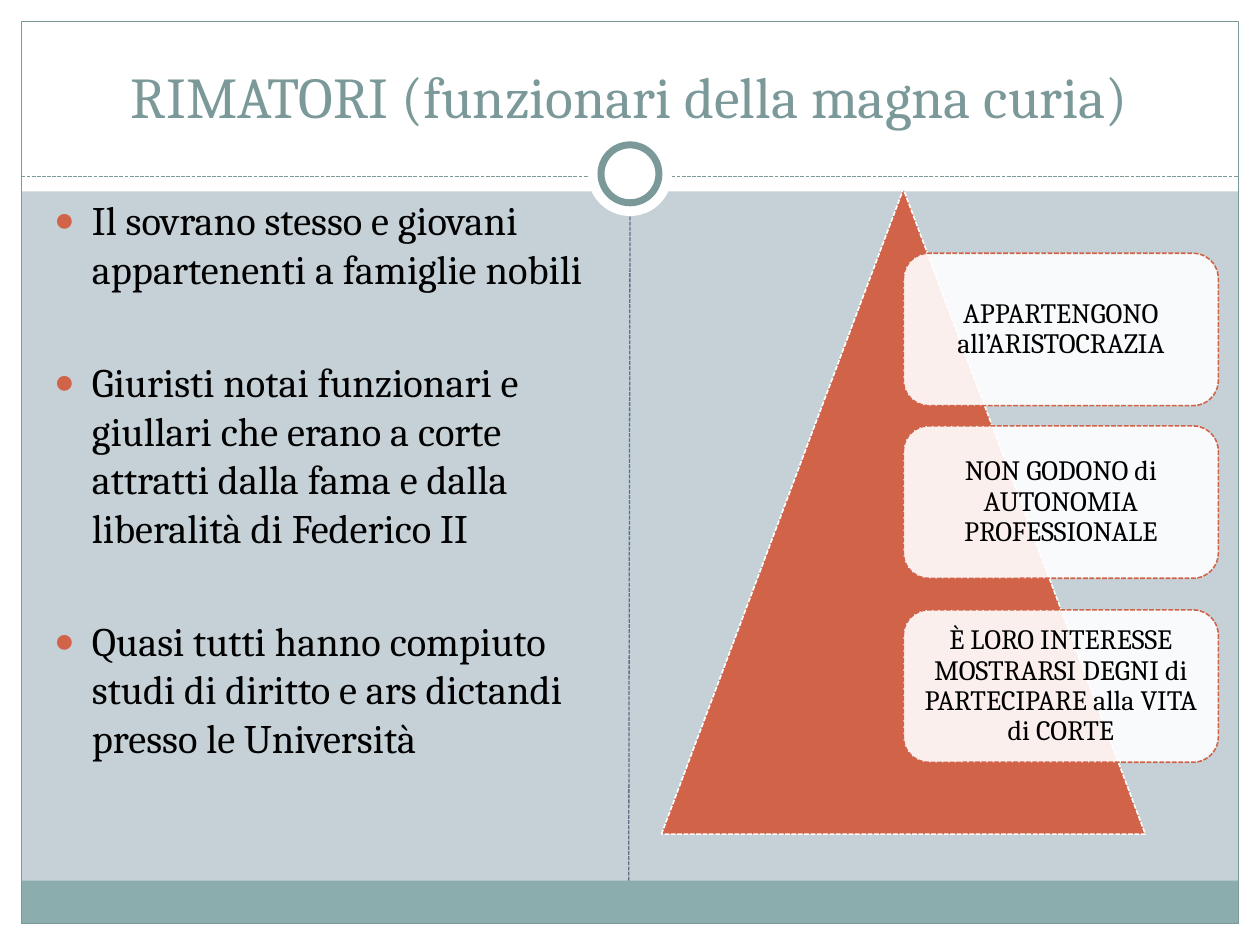
from lxml import etree
from pptx import Presentation
from pptx.dml.color import RGBColor
from pptx.enum.dml import MSO_LINE
from pptx.enum.shapes import MSO_CONNECTOR, MSO_SHAPE
from pptx.enum.text import MSO_ANCHOR, MSO_AUTO_SIZE, PP_ALIGN
from pptx.oxml.ns import qn
from pptx.util import Inches, Pt

COLORS = {
    "background": "C5D1D7",
    "white": "FFFFFF",
    "band": "8CADAE",
    "frame": "7C999A",
    "divider": "646B86",
    "accent": "D16349",
    "text": "000000",
}
FONT = "Cambria"
TITLE = "RIMATORI (funzionari della magna curia)"
BULLETS = [
    "Il sovrano stesso e giovani appartenenti a famiglie nobili",
    "Giuristi notai funzionari e giullari che erano a corte attratti dalla fama "
    "e dalla liberalità di Federico II",
    "Quasi tutti hanno compiuto studi di diritto e ars dictandi presso le Università",
]
# Top of each card and its text
CARDS = [
    (2.01, "APPARTENGONO all’ARISTOCRAZIA"),
    (3.38, "NON GODONO di AUTONOMIA PROFESSIONALE"),
    (4.84, "È LORO INTERESSE MOSTRARSI DEGNI di PARTECIPARE alla VITA di CORTE"),
]


def rgb(name):
    return RGBColor.from_string(COLORS[name])


def style_line(line, color, width, dashed=False):
    line.color.rgb = rgb(color)
    line.width = Pt(width)
    if dashed:
        line.dash_style = MSO_LINE.SQUARE_DOT


def add_box(slide, preset, box, fill=None, line=None, width=0.75, dashed=False):
    shape = slide.shapes.add_shape(preset, *map(Inches, box))
    shape.shadow.inherit = False
    if fill:
        shape.fill.solid()
        shape.fill.fore_color.rgb = rgb(fill)
    else:
        shape.fill.background()
    if line:
        style_line(shape.line, line, width, dashed)
    else:
        shape.line.fill.background()
    return shape


def add_dashed_line(slide, start, end, color):
    connector = slide.shapes.add_connector(
        MSO_CONNECTOR.STRAIGHT, *map(Inches, start + end))
    style_line(connector.line, color, 0.75, dashed=True)
    etree.SubElement(connector.element.spPr, qn("a:effectLst"))


def format_paragraph(paragraph, size, color, alignment):
    paragraph.alignment = alignment
    paragraph.font.name = FONT
    paragraph.font.size = Pt(size)
    paragraph.font.color.rgb = rgb(color)


def add_bullet(paragraph, color, indent):
    properties = paragraph._p.get_or_add_pPr()
    properties.set("marL", str(Inches(indent)))
    properties.set("indent", str(-Inches(indent)))
    bullet_color = etree.SubElement(properties, qn("a:buClr"))
    etree.SubElement(bullet_color, qn("a:srgbClr"), val=COLORS[color])
    etree.SubElement(properties, qn("a:buSzPct"), val="85000")
    etree.SubElement(properties, qn("a:buChar"), char="●")


def place_placeholder(placeholder, box, anchor):
    """Move a placeholder to its box and in front of the frame."""
    placeholder.left, placeholder.top, placeholder.width, placeholder.height = map(Inches, box)
    placeholder.text_frame.auto_size = MSO_AUTO_SIZE.NONE
    placeholder.text_frame.vertical_anchor = anchor
    placeholder.element.getparent().append(placeholder.element)


def add_frame(slide, box):
    left, top, width, height = box
    margin, header, footer = 0.17, 1.52, 0.34
    right, bottom = left + width, top + height
    center = left + width / 2
    inner = (left + margin, top + margin, width - 2 * margin, height - 2 * margin)
    # White borders and header, then the footer band
    for border in [
        (left, bottom - margin, width, margin),
        (left, top, width, header),
        (left, top, margin, height),
        (right - margin, top, margin, height),
    ]:
        add_box(slide, MSO_SHAPE.RECTANGLE, border, fill="white")
    band_top = bottom - margin - footer
    add_box(slide, MSO_SHAPE.RECTANGLE,
            (left + margin, band_top, width - 2 * margin, footer), fill="band")
    add_box(slide, MSO_SHAPE.RECTANGLE, inner, line="frame")
    # Dashed rule with the ring on it
    add_dashed_line(slide, (left + margin, top + 1.4), (right - margin, top + 1.4), "frame")
    ring_middle = top + 1.38
    for size, line in [(0.67, None), (0.46, "frame")]:
        ring = (center - size / 2, ring_middle - size / 2, size, size)
        add_box(slide, MSO_SHAPE.OVAL, ring, fill="white", line=line, width=4)
    # Column divider
    add_dashed_line(slide, (center - 0.01, band_top), (center, top + 1.72), "divider")


def fill_title(title, box):
    place_placeholder(title, box, MSO_ANCHOR.BOTTOM)
    title.text_frame.text = TITLE
    format_paragraph(title.text_frame.paragraphs[0], 33, "frame", PP_ALIGN.CENTER)


def fill_bullets(body, box):
    place_placeholder(body, box, MSO_ANCHOR.TOP)
    body.text_frame.text = "\n".join(BULLETS)
    for index, paragraph in enumerate(body.text_frame.paragraphs):
        format_paragraph(paragraph, 23.1, "text", PP_ALIGN.LEFT)
        paragraph.space_before = Pt(37 if index else 4.6)
        add_bullet(paragraph, "accent", 0.3)


def add_card(slide, box, text):
    card = add_box(slide, MSO_SHAPE.ROUNDED_RECTANGLE, box, fill="white",
                   line="accent", width=0.9, dashed=True)
    fill_color = card.element.spPr.find(qn("a:solidFill")).find(qn("a:srgbClr"))
    etree.SubElement(fill_color, qn("a:alpha"), val="90000")
    frame = card.text_frame
    frame.word_wrap = True
    frame.vertical_anchor = MSO_ANCHOR.MIDDLE
    frame.margin_left = frame.margin_right = Inches(0.07)
    frame.margin_top = frame.margin_bottom = Inches(0.07)
    frame.text = text
    paragraph = frame.paragraphs[0]
    format_paragraph(paragraph, 16, "text", PP_ALIGN.CENTER)
    paragraph.line_spacing = 0.9


def add_pyramid(slide, box):
    left, top, width, height = box
    triangle_width = 3.84
    add_box(slide, MSO_SHAPE.ISOSCELES_TRIANGLE, (left, top, triangle_width, height),
            fill="accent", line="white", width=0.9, dashed=True)
    card_left = left + triangle_width / 2
    for card_top, text in CARDS:
        add_card(slide, (card_left, card_top, left + width - card_left, 1.21), text)


def main():
    presentation = Presentation()
    presentation.slide_width, presentation.slide_height = Inches(10), Inches(7.5)
    slide = presentation.slides.add_slide(presentation.slide_layouts[1])
    slide.background.fill.solid()
    slide.background.fill.fore_color.rgb = rgb("background")
    add_frame(slide, (0, 0, 10, 7.5))
    fill_title(slide.shapes.title, (0.33, 0.25, 9.33, 0.83))
    fill_bullets(slide.placeholders[1], (0.33, 1.5, 4.42, 5.12))
    add_pyramid(slide, (5.25, 1.5, 4.42, 5.12))
    presentation.save("out.pptx")


if __name__ == "__main__":
    main()
